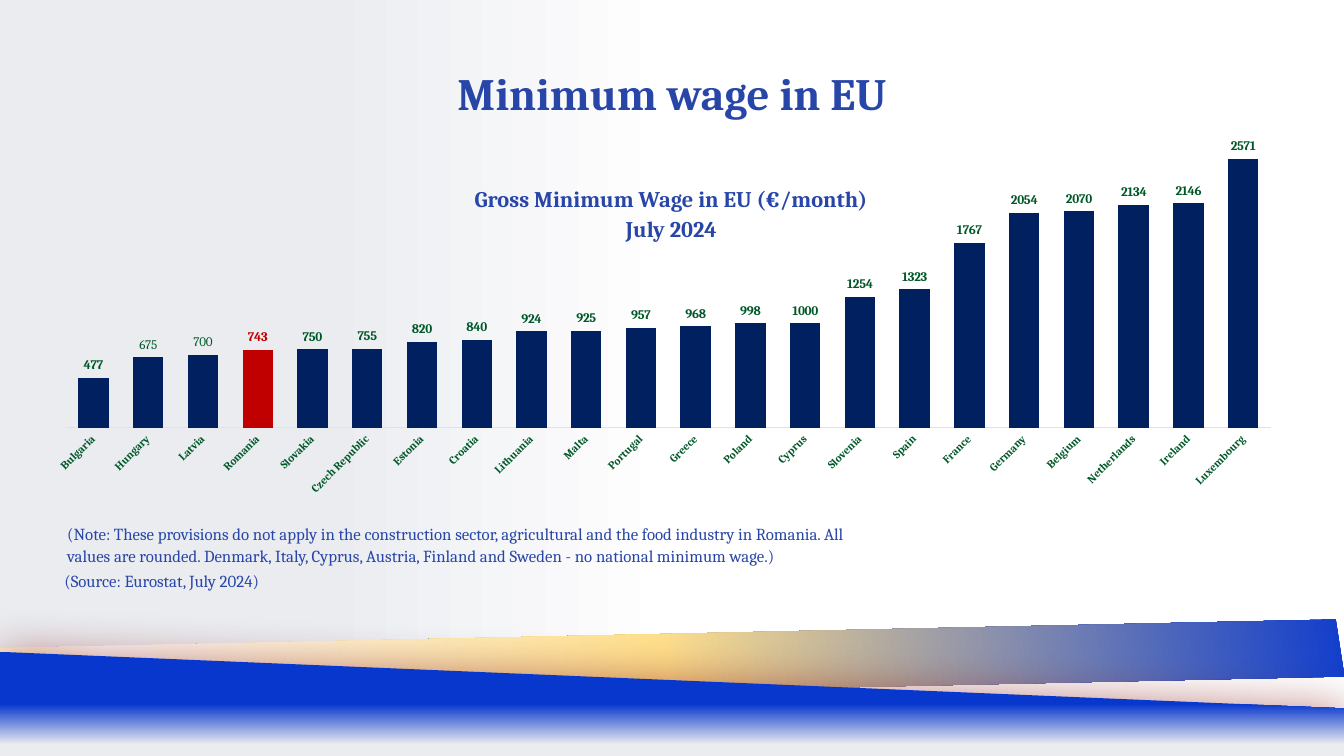
from lxml import etree
from pptx import Presentation
from pptx.chart.data import CategoryChartData
from pptx.dml.color import RGBColor
from pptx.enum.chart import XL_CHART_TYPE as CT, XL_LABEL_POSITION as LP, XL_TICK_MARK as TM
from pptx.enum.shapes import MSO_SHAPE as SHAPE
from pptx.enum.text import MSO_ANCHOR as ANCHOR, MSO_AUTO_SIZE as AUTO, PP_ALIGN as ALIGN
from pptx.oxml import parse_xml
from pptx.oxml.ns import nsdecls, qn
from pptx.util import Pt

BLUE, GREEN, NAVY, RED = "2846A8", "005828", "002060", "C00000"
SERIF = "Cambria"
WAGES = {
    "Bulgaria": 477, "Hungary": 675, "Latvia": 700, "Romania": 743,
    "Slovakia": 750, "Czech Republic": 755, "Estonia": 820, "Croatia": 840,
    "Lithuania": 924, "Malta": 925, "Portugal": 957, "Greece": 968,
    "Poland": 998, "Cyprus": 1000, "Slovenia": 1254, "Spain": 1323,
    "France": 1767, "Germany": 2054, "Belgium": 2070, "Netherlands": 2134,
    "Ireland": 2146, "Luxembourg": 2571,
}
PLAIN_LABELS = ("Hungary", "Latvia")
HIGHLIGHT = "Romania"


def rgb(color):
    return RGBColor.from_string(color)


def set_font(font, color, **fmt):
    for name, value in {"name": SERIF, **fmt}.items():
        setattr(font, name, value)
    font.color.rgb = rgb(color)


def set_gradient(fill, parent, stops, angle):
    fill.gradient()
    grad = parent.find(qn("a:gradFill"))
    for child in list(grad):
        grad.remove(child)
    gs_lst = etree.SubElement(grad, qn("a:gsLst"))
    for pos, color in stops:
        gs = etree.SubElement(gs_lst, qn("a:gs"), pos=str(pos * 1000))
        etree.SubElement(gs, qn("a:srgbClr"), val=color)
    etree.SubElement(grad, qn("a:lin"), ang=str(angle * 60000), scaled="0")


def add_background(slide):
    fill = slide.background.fill
    fill.solid()
    bg_pr = slide.background._cSld.find(qn("p:bg")).find(qn("p:bgPr"))
    stops = [(0, "FFFFFF"), (50, "FFFFFF"), (76, "EAECF0"), (100, "EAECF0")]
    set_gradient(fill, bg_pr, stops, 180)


def add_footer(slide, left, top, width, height):
    band = slide.shapes.add_shape(SHAPE.PARALLELOGRAM, left + Pt(292.3), top - Pt(354.2),
                                  Pt(125.3), width)
    band.adjustments[0] = 0.753
    band.rotation = 81.3
    band.shadow.inherit = False
    band.line.fill.background()
    set_gradient(band.fill, band._element.spPr,
                 [(0, "0837CE"), (50, "FFDF8C"), (89, "FFFFFF"), (100, "FFEAB3")], 90)

    right, bottom = left + width, top + height
    builder = slide.shapes.build_freeform(left, top)
    builder.add_line_segments([(right, top + Pt(30.3)), (right, bottom), (left, bottom)])
    wedge = builder.convert_to_shape()
    wedge.shadow.inherit = False
    wedge.line.fill.background()
    sp_pr = wedge._element.spPr
    set_gradient(wedge.fill, sp_pr,
                 [(0, "0837CE"), (50, "0837CE"), (89, "EAECF0"), (100, "EAECF0")], 90)
    glow = etree.SubElement(sp_pr.find(qn("a:effectLst")), qn("a:outerShdw"),
                            blurRad=str(Pt(24.8)), dist="0", dir="0", rotWithShape="0")
    clr = etree.SubElement(glow, qn("a:srgbClr"), val="7E0808")
    etree.SubElement(clr, qn("a:alpha"), val="50000")


def set_frame(tf, insets, anchor, auto_size):
    side, end = insets
    frame = {"margin_left": side, "margin_right": side, "margin_top": end,
             "margin_bottom": end, "vertical_anchor": anchor,
             "word_wrap": True, "auto_size": auto_size}
    for name, value in frame.items():
        setattr(tf, name, value)


def add_title(slide, text, left, top, width, height):
    title = slide.shapes.title
    title.left, title.top, title.width, title.height = left, top, width, height
    tf = title.text_frame
    set_frame(tf, (0, 0), ANCHOR.BOTTOM, AUTO.NONE)
    p = tf.paragraphs[0]
    p.alignment = ALIGN.CENTER
    r = p.add_run()
    r.text = text
    set_font(r.font, BLUE, size=Pt(24), bold=True)


def add_text(slide, lines, left, top, width, height, size=9, bold=False,
             align=ALIGN.LEFT, insets=(0, 0)):
    tf = slide.shapes.add_textbox(left, top, width, height).text_frame
    set_frame(tf, insets, ANCHOR.TOP, AUTO.SHAPE_TO_FIT_TEXT)
    for i, line in enumerate(lines):
        p = tf.add_paragraph() if i else tf.paragraphs[0]
        p.alignment, p.line_spacing = align, 1.1
        r = p.add_run()
        r.text = line
        set_font(r.font, BLUE, size=Pt(size), bold=bold)


def set_plot_area(chart, x, y, w, h):
    plot_area = chart._chartSpace.chart.plotArea
    for layout in plot_area.findall(qn("c:layout")):
        plot_area.remove(layout)
    sizes = "".join(f'<c:{tag} val="{val}"/>' for tag, val in zip("xywh", (x, y, w, h)))
    plot_area.insert(0, parse_xml(
        f'<c:layout {nsdecls("c")}><c:manualLayout><c:layoutTarget val="inner"/>'
        f'<c:xMode val="edge"/><c:yMode val="edge"/>{sizes}</c:manualLayout></c:layout>'))


def add_wage_chart(slide, left, top, width, height):
    data = CategoryChartData()
    data.categories = list(WAGES)
    data.add_series("Series 1", list(WAGES.values()))
    chart = slide.shapes.add_chart(CT.COLUMN_CLUSTERED, left, top, width, height, data).chart
    chart.has_title = chart.has_legend = False
    set_font(chart.font, "3E4655", name="Arial", size=Pt(10))
    set_plot_area(chart, 0.012, 0.036, 0.97, 0.705)

    value_axis = chart.value_axis
    value_axis.minimum_scale, value_axis.maximum_scale = 0, 3000
    value_axis.has_major_gridlines = value_axis.visible = False

    axis = chart.category_axis
    axis.major_tick_mark = axis.minor_tick_mark = TM.NONE
    axis.format.line.color.rgb = rgb("E0E2E8")
    axis.format.line.width = Pt(0.75)
    set_font(axis.tick_labels.font, GREEN, size=Pt(6), bold=True)
    axis._element.find(qn("c:txPr")).find(qn("a:bodyPr")).set("rot", "-2700000")

    plot = chart.plots[0]
    plot.gap_width, plot.overlap, plot.vary_by_categories = 80, -27, False
    series = plot.series[0]
    series.format.fill.solid()
    series.format.fill.fore_color.rgb = rgb(NAVY)
    labels = series.data_labels
    labels.show_value, labels.position = True, LP.OUTSIDE_END
    set_font(labels.font, GREEN, size=Pt(7), bold=True)

    countries = list(WAGES)
    for country in PLAIN_LABELS:
        label = series.points[countries.index(country)].data_label
        r = label.text_frame.paragraphs[0].add_run()
        r.text = str(WAGES[country])
        set_font(r.font, GREEN, size=Pt(7), bold=False)
        label.position = LP.OUTSIDE_END
    point = series.points[countries.index(HIGHLIGHT)]
    point.format.fill.solid()
    point.format.fill.fore_color.rgb = rgb(RED)
    set_font(point.data_label.font, RED, size=Pt(7), bold=True)
    point.data_label.position = LP.OUTSIDE_END


def main():
    prs = Presentation()
    prs.slide_width, prs.slide_height = Pt(720), Pt(405)
    slide = prs.slides.add_slide(prs.slide_layouts[5])
    add_background(slide)
    add_footer(slide, 0, Pt(349.2), Pt(720), Pt(55.8))
    add_title(slide, "Minimum wage in EU", 0, Pt(33), Pt(720), Pt(31))
    add_text(slide, ["(Note: These provisions do not apply in the construction sector, "
                     "agricultural and the food industry in Romania. All values are rounded. "
                     "Denmark, Italy, Cyprus, Austria, Finland and Sweden - no national "
                     "minimum wage.)"], Pt(36), Pt(279.4), Pt(427.7), Pt(23.8))
    add_text(slide, ["Gross Minimum Wage in EU (€/month)", "July 2024"],
             Pt(220.3), Pt(98), Pt(278.6), Pt(31), size=12, bold=True, align=ALIGN.CENTER)
    add_text(slide, ["(Source: Eurostat, July 2024)"],
             Pt(27.4), Pt(301), Pt(161.3), Pt(18), insets=(Pt(7.2), Pt(3.6)))
    add_wage_chart(slide, Pt(27.4), Pt(52.6), Pt(665.3), Pt(238.3))
    prs.save("out.pptx")


if __name__ == "__main__":
    main()
